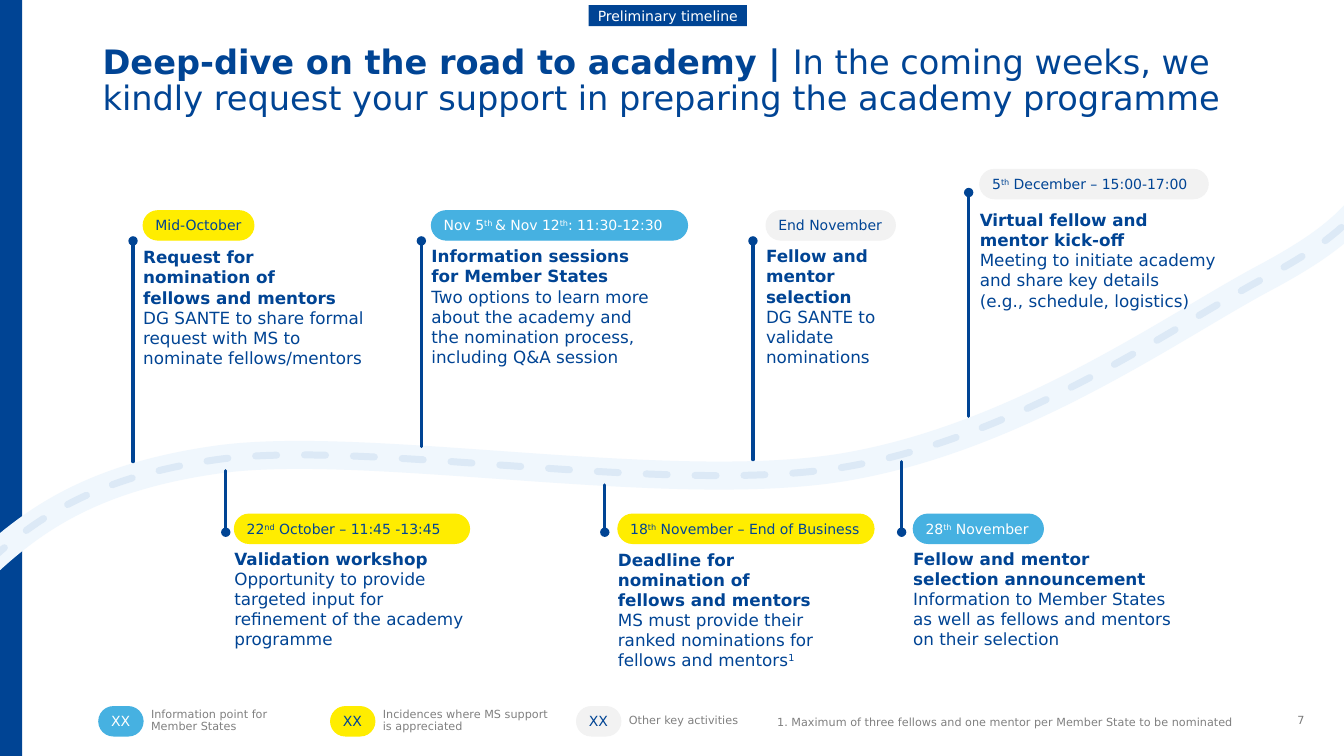
import pptx
import pptx.dml.color
import pptx.enum.dml
import pptx.enum.shapes
import pptx.enum.text
import pptx.oxml
import pptx.oxml.ns
import pptx.util

COLUMNS, ROWS = 160, 90
CELL = pptx.util.Inches(7.5) / ROWS
FONT = "DejaVu Sans"
BLUE, SKY, YELLOW, PALE = "004494", "46B1E1", "FFED00", "F2F2F2"
WHITE, GREY, NUMBER_GREY = "FFFFFF", "808080", "797979"
ROAD, ROAD_DASH = "F0F7FD", "DCE9F6"
TEXT_ON = {SKY: WHITE, YELLOW: BLUE, PALE: BLUE, BLUE: WHITE}
PILL_HEIGHT = 3.5
SHORT, TALL = 12.12, 14.52

# Rows of the pin head, the date pill and the description
TOP = (22.92, 20.16, 24.84)
UPPER = (28.68, 25.08, 29.28)
LOWER = (63.36, 61.2, 65.28)

# Level, pin column, road row, text column, pill width, text width, text height,
# anchor, pill colour, date, heading, description; ^ encloses superscripts.
# A heading that ends in white space shares its paragraph with the description.
MILESTONES = [
    (UPPER, 15.84, 54.96, 17.04, 13.2, 28, TALL, "BOTTOM", YELLOW, "Mid-October",
     "Request for\nnomination of\nfellows and mentors \n",
     "DG SANTE to share formal request with MS to nominate fellows/mentors"),
    (LOWER, 26.88, 56.04, 27.9, 28, 28, SHORT, "TOP", YELLOW,
     "22^nd^ October – 11:45 -13:45", "Validation workshop ",
     "Opportunity to provide targeted input for refinement of the academy programme"),
    (UPPER, 50.16, 53.16, 51.36, 30.5, 26.8, TALL, "TOP", SKY,
     "Nov 5^th ^& Nov 12^th^: 11:30-12:30", "Information sessions for Member States \n",
     "Two options to learn more about the academy and the nomination process, "
     "including Q&A session"),
    (LOWER, 72, 57.72, 73.56, 30.5, 24.5, TALL, "BOTTOM", YELLOW,
     "18^th^ November – End of Business",
     "Deadline for nomination of \nfellows and mentors\n",
     "MS must provide their ranked nominations for fellows and mentors^1^"),
    (UPPER, 89.64, 54.72, 91.2, 15.4, 19, SHORT, "TOP", PALE, "End November",
     "Fellow and mentor selection", "DG SANTE to validate nominations"),
    (LOWER, 107.34, 54.96, 108.72, 15.5, 31, SHORT, "TOP", SKY, "28^th^ November",
     "Fellow and mentor selection announcement",
     "Information to Member States as well as fellows and mentors on their selection"),
    (TOP, 115.32, 49.56, 116.64, 27.2, 29.6, SHORT, "BOTTOM", PALE,
     "5^th^ December – 15:00-17:00", "Virtual fellow and \nmentor kick-off",
     "Meeting to initiate academy and share key details \n(e.g., schedule, logistics)"),
]

# Column, colour, label top, label height, meaning
LEGEND = [
    (11.76, SKY, 83.76, 4.08, "Information point for \nMember States"),
    (39.36, YELLOW, 83.76, 4.08, "Incidences where MS support\nis appreciated"),
    (68.64, PALE, 84.48, 2.64, "Other key activities"),
]

# Start of the road, then two control points and an end for each curve
ROAD_POINTS = [
    (-5.52, 70.92),
    (1.32, 64.08), (8.04, 57.24), (25.8, 54.72),
    (43.56, 52.2), (80.04, 59.16), (100.8, 55.56),
    (121.56, 51.96), (139.68, 38.88), (150.48, 33.12),
    (161.28, 27.36), (161.28, 24.96), (165.72, 20.64),
]


def cells(*counts):
    return [round(count * CELL) for count in counts]


def rgb(value):
    return pptx.dml.color.RGBColor.from_string(value)


def drawing_element(tag, attributes=""):
    return pptx.oxml.parse_xml(
        f'<a:{tag} {pptx.oxml.ns.nsdecls("a")} {attributes}/>')


def set_line(shape, color, width):
    """Give the shape a round-capped line."""
    shape.line.color.rgb = rgb(color)
    shape.line.width = pptx.util.Pt(width)
    shape.line._get_or_add_ln().set("cap", "rnd")


def write(paragraph, text, size, color, bold=False):
    """Add text run by run; ^ toggles superscript, a newline breaks the line."""
    for index, part in enumerate(text.split("^")):
        for number, line in enumerate(part.split("\n")):
            if number:
                paragraph.add_line_break()
            if not line:
                continue
            run = paragraph.add_run()
            run.text = line
            run.font.name = FONT
            run.font.size = pptx.util.Pt(size)
            run.font.bold = bold
            run.font.color.rgb = rgb(color)
            if index % 2:
                run._r.get_or_add_rPr().set("baseline", "30000")


def set_frame(shape, insets, anchor="TOP", wrap=True):
    frame = shape.text_frame
    frame.word_wrap = wrap
    frame.vertical_anchor = getattr(pptx.enum.text.MSO_ANCHOR, anchor)
    frame.margin_left = frame.margin_right = pptx.util.Inches(insets[0])
    frame.margin_top = frame.margin_bottom = pptx.util.Inches(insets[1])
    return frame


def add_text(slide, box, insets=(0, 0), anchor="TOP"):
    return set_frame(slide.shapes.add_textbox(*cells(*box)), insets, anchor)


def add_block(slide, kind, box, color):
    shape = slide.shapes.add_shape(kind, *cells(*box))
    shape.shadow.inherit = False
    shape.fill.solid()
    shape.fill.fore_color.rgb = rgb(color)
    shape.line.fill.background()
    return shape


def add_label(slide, kind, box, color, text, align="LEFT"):
    """Add a filled shape with one line of small text."""
    shape = add_block(slide, kind, box, color)
    paragraph = set_frame(shape, (0.08, 0.02), "MIDDLE", False).paragraphs[0]
    paragraph.alignment = getattr(pptx.enum.text.PP_ALIGN, align)
    write(paragraph, text, 10, TEXT_ON[color])
    return shape


def add_pill(slide, left, top, width, color, text):
    kind = pptx.enum.shapes.MSO_SHAPE.ROUNDED_RECTANGLE
    pill = add_label(slide, kind, (left, top, width, PILL_HEIGHT), color, text)
    pill.adjustments[0] = 0.5
    set_line(pill, color, 0.75)


def add_road(group, color, width):
    points = [cells(*point) for point in ROAD_POINTS]
    builder = group.shapes.build_freeform(*points[0])
    builder.add_line_segments(points[1:], close=False)
    road = builder.convert_to_shape()
    segments = list(road._element.iter(pptx.oxml.ns.qn("a:lnTo")))
    for start in range(0, len(segments), 3):
        curve = drawing_element("cubicBezTo")
        segments[start].addprevious(curve)
        for segment in segments[start:start + 3]:
            curve.append(segment[0])
            segment.getparent().remove(segment)
    road.shadow.inherit = False
    road.fill.background()
    set_line(road, color, width)
    return road


def add_pin(slide, column, road_row, head_row):
    pin = slide.shapes.add_connector(
        pptx.enum.shapes.MSO_CONNECTOR.STRAIGHT,
        *cells(column, road_row, column, head_row))
    set_line(pin, BLUE, 2.25)
    pin.line._get_or_add_ln().append(drawing_element("tailEnd", 'type="oval"'))
    pin._element.spPr.append(drawing_element("effectLst"))


def add_milestone(slide, level, pin_column, road_row, left, pill_width, text_width,
                  text_height, anchor, color, date, heading, description):
    head_row, pill_row, text_row = level
    add_pin(slide, pin_column, road_row, head_row)
    add_pill(slide, left, pill_row, pill_width, color, date)
    box = (left, text_row, text_width, text_height)
    frame = add_text(slide, box, anchor=anchor)
    paragraph = frame.paragraphs[0]
    write(paragraph, heading, 12, BLUE, True)
    if not heading[-1].isspace():
        paragraph = frame.add_paragraph()
    write(paragraph, description, 12, BLUE)


def add_small_text(slide, box, text, color=GREY, insets=(0.1, 0.05), align="LEFT"):
    paragraph = add_text(slide, box, insets, "MIDDLE").paragraphs[0]
    paragraph.line_spacing = 0.9
    paragraph.alignment = getattr(pptx.enum.text.PP_ALIGN, align)
    write(paragraph, text, 8, color)


def main():
    presentation = pptx.Presentation()
    presentation.slide_width, presentation.slide_height = cells(COLUMNS, ROWS)
    slide = presentation.slides.add_slide(presentation.slide_layouts[6])
    rectangle = pptx.enum.shapes.MSO_SHAPE.RECTANGLE

    add_block(slide, rectangle, (0, 0, 2.64, ROWS), BLUE)
    road = slide.shapes.add_group_shape()
    add_road(road, ROAD, 20)
    add_road(road, ROAD_DASH, 5).line.dash_style = pptx.enum.dml.MSO_LINE.DASH

    title = add_text(slide, (11.04, 4.8, 143.64, 9.96), (0.1, 0.05)).paragraphs[0]
    title.line_spacing = 0.9
    write(title, "Deep-dive on the road to academy | ", 24, BLUE, True)
    write(title, "In the coming weeks, we kindly request your support in "
                 "preparing the academy programme", 24, BLUE)
    add_label(slide, rectangle, (70.08, 0.6, 18.84, 2.52), BLUE,
              "Preliminary timeline", "CENTER")

    for milestone in MILESTONES:
        add_milestone(slide, *milestone)
    for left, color, label_top, label_height, meaning in LEGEND:
        add_pill(slide, left, 84.12, 5.28, color, "XX")
        add_small_text(slide, (left + 5.04, label_top, 24.96, label_height), meaning)
    add_small_text(slide, (92.52, 85.32, 54.96, 1.44),
                   "1. Maximum of three fellows and one mentor per Member State "
                   "to be nominated", insets=(0, 0))
    add_small_text(slide, (152.76, 84, 3.72, 3.6), "7", NUMBER_GREY, align="RIGHT")
    presentation.save("out.pptx")


if __name__ == "__main__":
    main()
